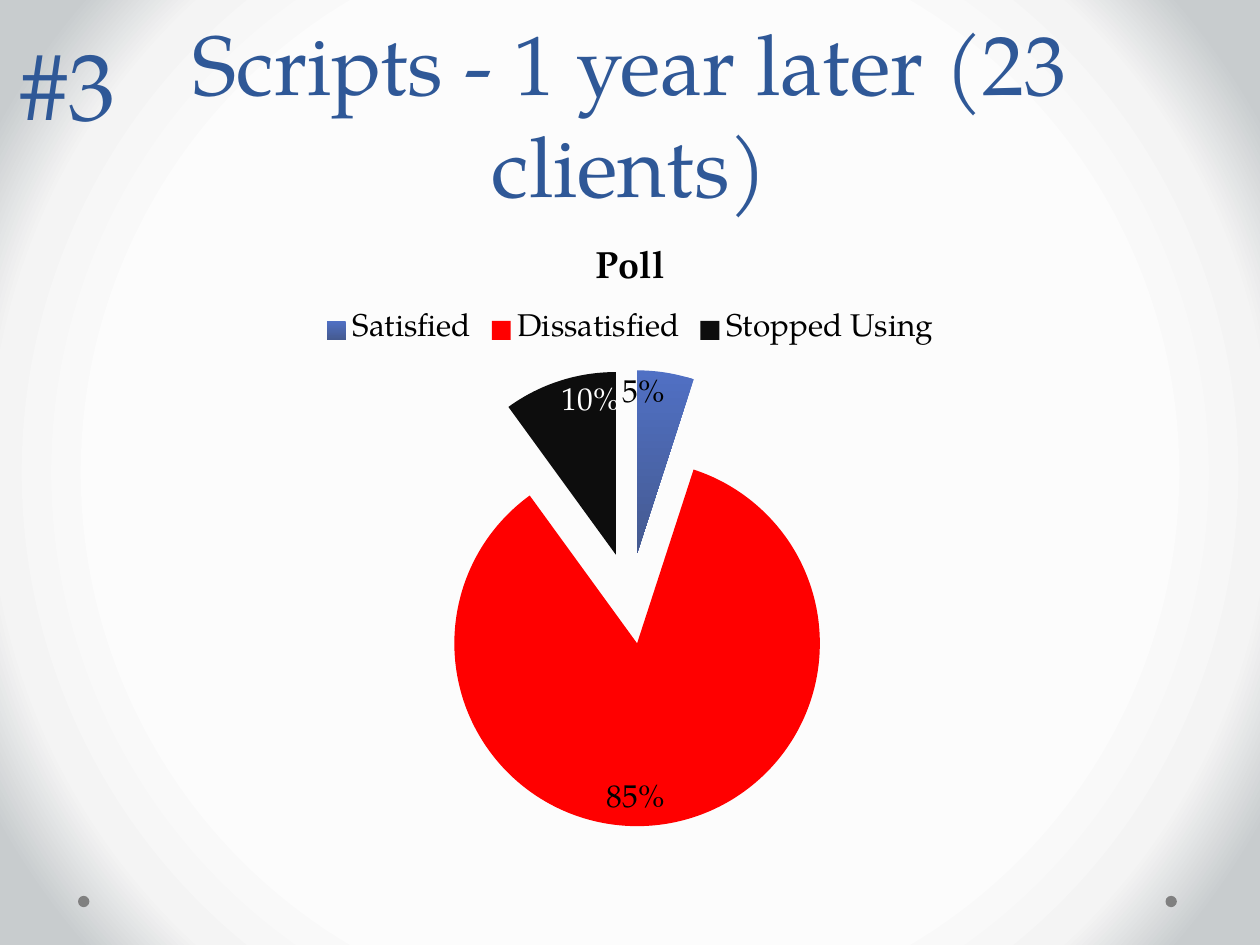
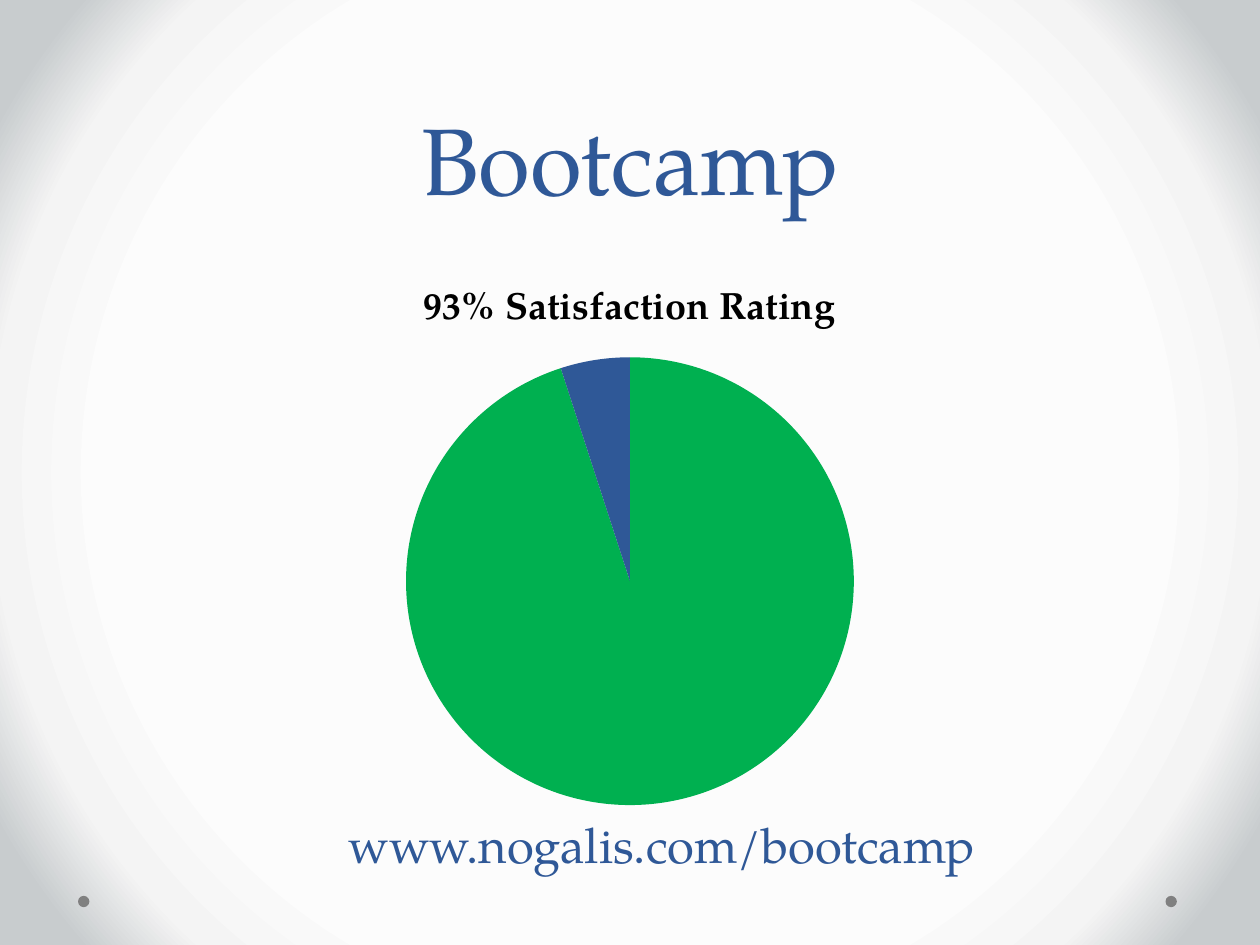
from lxml import etree
from pptx import Presentation
from pptx.chart import data as chart_data
from pptx.dml.color import RGBColor
from pptx.enum import chart as charts, shapes, text
from pptx.oxml import parse_xml
from pptx.oxml.ns import nsdecls, qn
from pptx.util import Pt

FONT = "TeX Gyre Pagella"
COLORS = {
    "navy": "2F5897", "black": "000000", "white": "FFFFFF", "dot": "808080",
    "red": "FF0000", "ink": "0D0D0D", "green": "00B050",
    "blue_top": "5070C4", "blue_bottom": "455A90",
}
BACKGROUND_STOPS = [(66, "FCFCFC"), (81, "F4F4F4"), (92, "C8CCCE")]


def rgb(name):
    return RGBColor.from_string(COLORS[name])


class SlideBuilder:
    """Holds the deck, its shared style and the current slide."""

    def __init__(self):
        self.deck = Presentation()
        self.deck.slide_width, self.deck.slide_height = Pt(720), Pt(540)
        self.slide = None

    def style(self, font, size, color, bold=False):
        font.name, font.size, font.bold = FONT, Pt(size), bold
        font.color.rgb = rgb(color)

    def new_slide(self, title, title_size=54):
        self.slide = self.deck.slides.add_slide(self.deck.slide_layouts[6])
        self.background()
        for left in (44.6, 666):
            self.dot(left, 511.9)
        self.text(title, 36, 0, 648, 126, title_size,
                  anchor=text.MSO_ANCHOR.BOTTOM)

    def background(self):
        self.slide.background.fill.gradient()
        old = self.slide.element.find(".//" + qn("a:gradFill"))
        stops = "".join(
            f'<a:gs pos="{place * 1000}"><a:srgbClr val="{color}"/></a:gs>'
            for place, color in BACKGROUND_STOPS)
        old.getparent().replace(old, parse_xml(
            f'<a:gradFill {nsdecls("a")} rotWithShape="1">'
            f'<a:gsLst>{stops}</a:gsLst><a:path path="circle">'
            '<a:fillToRect l="50000" t="50000" r="50000" b="50000"/>'
            '</a:path></a:gradFill>'))

    def dot(self, left, top, size=6.5):
        dot = self.slide.shapes.add_shape(
            shapes.MSO_SHAPE.OVAL, Pt(left), Pt(top), Pt(size), Pt(size))
        dot.shadow.inherit = False
        dot.fill.solid()
        dot.fill.fore_color.rgb = rgb("dot")
        dot.line.fill.background()

    def text(self, words, left, top, width, height, size,
             anchor=text.MSO_ANCHOR.TOP, heading=True):
        box = self.slide.shapes.add_textbox(
            Pt(left), Pt(top), Pt(width), Pt(height))
        frame = box.text_frame
        frame.text = words
        frame.word_wrap = heading
        frame.vertical_anchor = anchor
        para = frame.paragraphs[0]
        if heading:
            para.alignment = text.PP_ALIGN.CENTER
            para.line_spacing = Pt(58)
        self.style(para.runs[0].font, size, "navy")

    def pie(self, title, slices, left, top, width, height):
        """Draw a pie; slices are (category, value, color or color pair)."""
        source = chart_data.CategoryChartData()
        source.categories = [name for name, _, _ in slices]
        source.add_series(title, [value for _, value, _ in slices])
        chart = self.slide.shapes.add_chart(
            charts.XL_CHART_TYPE.PIE, Pt(left), Pt(top), Pt(width),
            Pt(height), source).chart
        self.style(chart.font, 18, "black")
        chart.has_legend = False
        chart.has_title = True
        chart.chart_title.text_frame.text = title
        span = chart.chart_title.text_frame.paragraphs[0].runs[0]
        self.style(span.font, 21.6, "black", bold=True)
        plot = chart.plots[0]
        plot.vary_by_categories = True
        for index, (_, _, color) in enumerate(slices):
            fill = plot.series[0].points[index].format.fill
            if isinstance(color, tuple):
                fill.gradient()
                fill.gradient_angle = 270
                for stop, shade, place in zip(fill.gradient_stops, color, (0, 1)):
                    stop.color.rgb = rgb(shade)
                    stop.position = place
            else:
                fill.solid()
                fill.fore_color.rgb = rgb(color)
        return chart

    def top_legend(self, chart):
        chart.has_legend = True
        chart.legend.position = charts.XL_LEGEND_POSITION.TOP
        chart.legend.include_in_layout = False
        self.style(chart.legend.font, 18, "black")

    def explode(self, chart, percent):
        series = chart.plots[0].series[0]._element
        explosion = etree.Element(qn("c:explosion"), val=str(percent))
        series.find(qn("c:tx")).addnext(explosion)

    def percent_labels(self, chart, light_point):
        series = chart.plots[0].series[0]
        labels = series.data_labels
        labels.show_percentage, labels.show_value = True, False
        labels.number_format, labels.number_format_is_linked = "0%", False
        labels.position = charts.XL_LABEL_POSITION.INSIDE_END
        self.style(labels.font, 18, "black")
        # One label sits on a dark slice and needs light text
        label = series.points[light_point].data_label
        self.style(label.font, 18, "white")
        label.position = charts.XL_LABEL_POSITION.INSIDE_END
        element = series._element.find(".//" + qn("c:dLbl"))
        element.find(qn("c:showVal")).set("val", "0")
        element.find(qn("c:showPercent")).set("val", "1")


def main():
    builder = SlideBuilder()

    # Scripts poll
    builder.new_slide("Scripts - 1 year later (23 clients)", title_size=48)
    poll = builder.pie("Poll", [
        ("Satisfied", 5, ("blue_top", "blue_bottom")),
        ("Dissatisfied", 85, "red"),
        ("Stopped Using", 10, "ink"),
    ], 36, 126, 648, 356.4)
    builder.top_legend(poll)
    builder.explode(poll, 25)
    builder.percent_labels(poll, light_point=2)
    builder.text("#3", -24, 18, 126, 114, 54)

    # Bootcamp rating
    builder.new_slide("Bootcamp")
    builder.pie("93% Satisfaction Rating",
                [("1", 95, "green"), ("2", 5, "navy")], 120, 150, 480, 320)
    builder.text("www.nogalis.com/bootcamp", 192, 462, 374, 41, 28,
                 heading=False)

    builder.deck.save("out.pptx")


if __name__ == "__main__":
    main()
